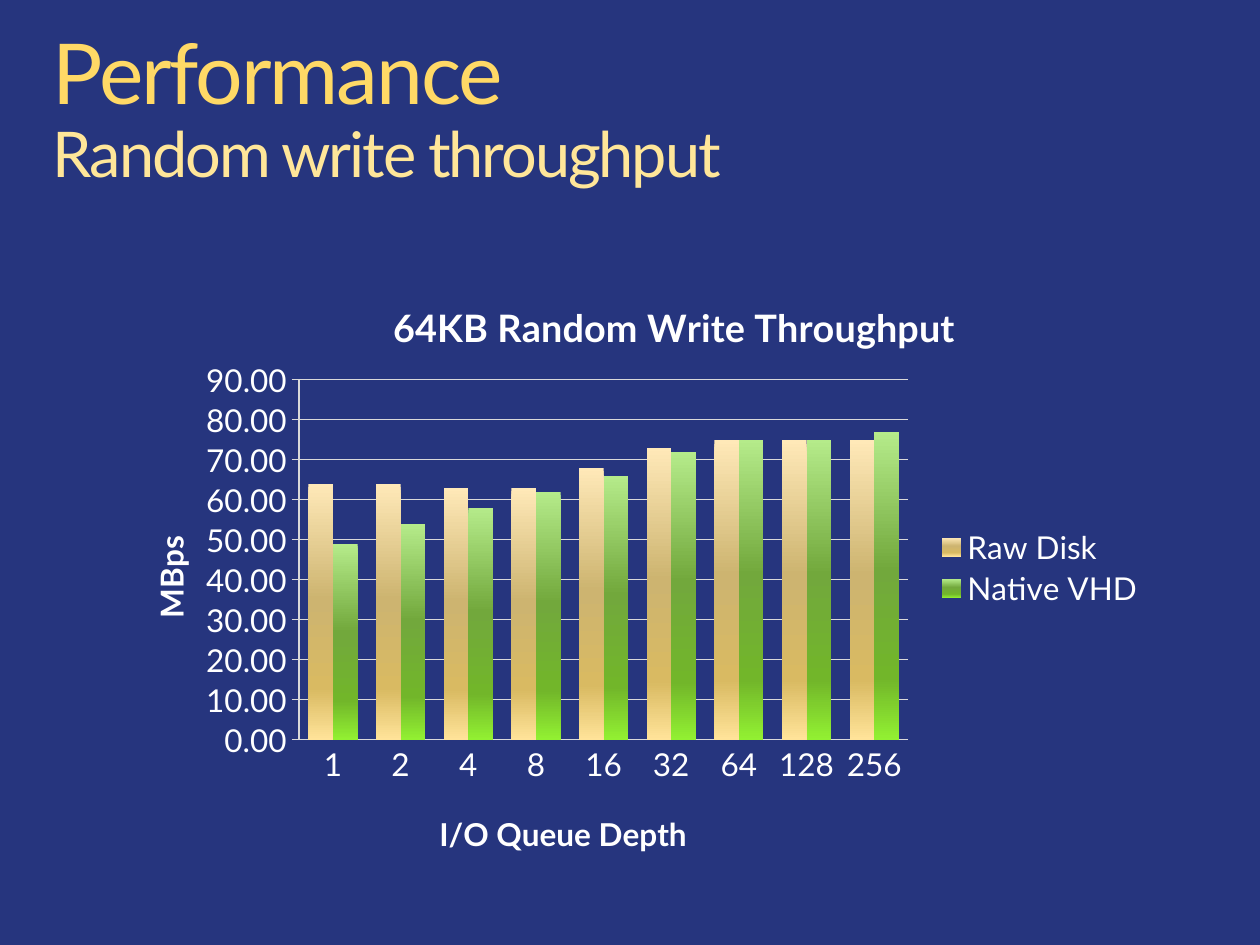
from lxml.etree import SubElement
from pptx import Presentation
from pptx.chart.data import CategoryChartData
from pptx.dml.color import RGBColor
from pptx.enum.chart import XL_CHART_TYPE as ChartType
from pptx.enum.chart import XL_LEGEND_POSITION as LegendPosition
from pptx.enum.chart import XL_TICK_MARK as TickMark
from pptx.enum.text import MSO_ANCHOR as Anchor
from pptx.oxml.ns import qn
from pptx.util import Emu, Pt

FONT = "Lato"
COLORS = {
    "background": "26357E",
    "heading": "FFD966",
    "subheading": "FFE699",
    "text": "FFFFFF",
    "line": "D9D9D9",
}
HEADING = [("Performance", 48, "heading"), ("Random write throughput", 36, "subheading")]
HEADING_BOX = (53, 32, 1154, 160)

CHART_BOX = (107, 262, 1050, 611)
CHART_TITLE = "64KB Random Write Throughput"
CATEGORY_TITLE = "I/O Queue Depth"
VALUE_TITLE = "MBps"
QUEUE_DEPTHS = ["1", "2", "4", "8", "16", "32", "64", "128", "256"]
SERIES = [
    ("Raw Disk", [64, 64, 63, 63, 68, 73, 75, 75, 75],
     [(0, "FFE9B8"), (45, "CDB470"), (80, "D9BA62"), (100, "FFE399")]),
    ("Native VHD", [49, 54, 58, 62, 66, 72, 75, 75, 77],
     [(0, "B5EB8A"), (45, "72A83C"), (80, "72B62A"), (100, "92F032")]),
]
PLOT_AREA = (299, 380, 609, 360)
LEGEND_AREA = (934, 525, 210, 86)
CHART_TITLE_AT = (386, 293)
CATEGORY_TITLE_AT = (434, 806)
VALUE_TITLE_AT = (143, 530)


def px(value):
    return Emu(value * 914400 // 126)


def color(name):
    return RGBColor.from_string(COLORS[name])


def style_font(font, size, name, bold=False):
    font.name, font.size, font.bold = FONT, Pt(size), bold
    font.color.rgb = color(name)


def place(element, index, area, inner=False):
    for old in element.findall(qn("c:layout")):
        element.remove(old)
    layout = SubElement(element, qn("c:layout"))
    element.insert(index, layout)
    manual = SubElement(layout, qn("c:manualLayout"))
    if inner:
        SubElement(manual, qn("c:layoutTarget")).set("val", "inner")
    for mode in ("xMode", "yMode"):
        SubElement(manual, qn(f"c:{mode}")).set("val", "edge")
    left, top, width, height = CHART_BOX
    offsets = (left, top, 0, 0)
    spans = (width, height, width, height)
    for key, value, offset, span in zip("xywh", area, offsets, spans):
        SubElement(manual, qn(f"c:{key}")).set("val", str(round((value - offset) / span, 3)))


def set_title(title, text, size, position):
    run = title.text_frame.paragraphs[0].add_run()
    run.text = text
    style_font(run.font, size, "text", True)
    place(title._element, 1, position)


def fill_gradient(series, stops):
    fill = series.format.fill
    fill.gradient()
    fill.gradient_angle = 270
    stop_list = series._element.find(".//" + qn("a:gsLst"))
    for old in list(stop_list):
        stop_list.remove(old)
    for percent, value in stops:
        stop = SubElement(stop_list, qn("a:gs"), pos=str(percent * 1000))
        SubElement(stop, qn("a:srgbClr"), val=value)


def add_heading(slide):
    frame = slide.shapes.add_textbox(*map(px, HEADING_BOX)).text_frame
    frame.word_wrap = True
    frame.vertical_anchor = Anchor.TOP
    frame.margin_left = frame.margin_top = frame.margin_right = frame.margin_bottom = 0
    paragraph = frame.paragraphs[0]
    paragraph.line_spacing = 0.9
    for index, (text, size, name) in enumerate(HEADING):
        if index:
            paragraph.add_line_break()
        run = paragraph.add_run()
        run.text = text
        style_font(run.font, size, name)
        run._r.get_or_add_rPr().set("spc", "-120")


def add_throughput_chart(slide):
    data = CategoryChartData(number_format="0.00")
    data.categories = QUEUE_DEPTHS
    for name, values, _ in SERIES:
        data.add_series(name, values)
    chart = slide.shapes.add_chart(
        ChartType.COLUMN_CLUSTERED, *map(px, CHART_BOX), data).chart
    style_font(chart.font, 18, "text")
    chart.has_title = True
    set_title(chart.chart_title, CHART_TITLE, 21.6, CHART_TITLE_AT)

    plot = chart.plots[0]
    plot.vary_by_categories = False
    plot.gap_width, plot.overlap = 75, 0
    for series, (_, _, stops) in zip(plot.series, SERIES):
        fill_gradient(series, stops)
    place(chart._chartSpace.chart.plotArea, 0, PLOT_AREA, inner=True)

    category_axis, value_axis = chart.category_axis, chart.value_axis
    value_axis.minimum_scale, value_axis.maximum_scale = 0, 90
    value_axis.major_unit = 10
    value_axis.has_major_gridlines = True
    value_axis.tick_labels.number_format = "0.00"
    value_axis.tick_labels.number_format_is_linked = False
    category_axis.major_tick_mark = TickMark.NONE
    value_axis.major_tick_mark = TickMark.CROSS
    for part in (category_axis, value_axis, value_axis.major_gridlines):
        part.format.line.color.rgb = color("line")
        part.format.line.width = Pt(0.75)
    set_title(category_axis.axis_title, CATEGORY_TITLE, 18, CATEGORY_TITLE_AT)
    set_title(value_axis.axis_title, VALUE_TITLE, 18, VALUE_TITLE_AT)
    body = value_axis.axis_title._element.find(".//" + qn("a:bodyPr"))
    body.set("rot", "-5400000")
    body.set("vert", "horz")

    chart.has_legend = True
    chart.legend.position = LegendPosition.RIGHT
    chart.legend.include_in_layout = False
    style_font(chart.legend.font, 18, "text")
    place(chart.legend._element, 1, LEGEND_AREA)


def main():
    presentation = Presentation()
    presentation.slide_width, presentation.slide_height = px(1260), px(945)
    slide = presentation.slides.add_slide(presentation.slide_layouts[6])
    slide.background.fill.solid()
    slide.background.fill.fore_color.rgb = color("background")
    add_heading(slide)
    add_throughput_chart(slide)
    presentation.save("out.pptx")


if __name__ == "__main__":
    main()
